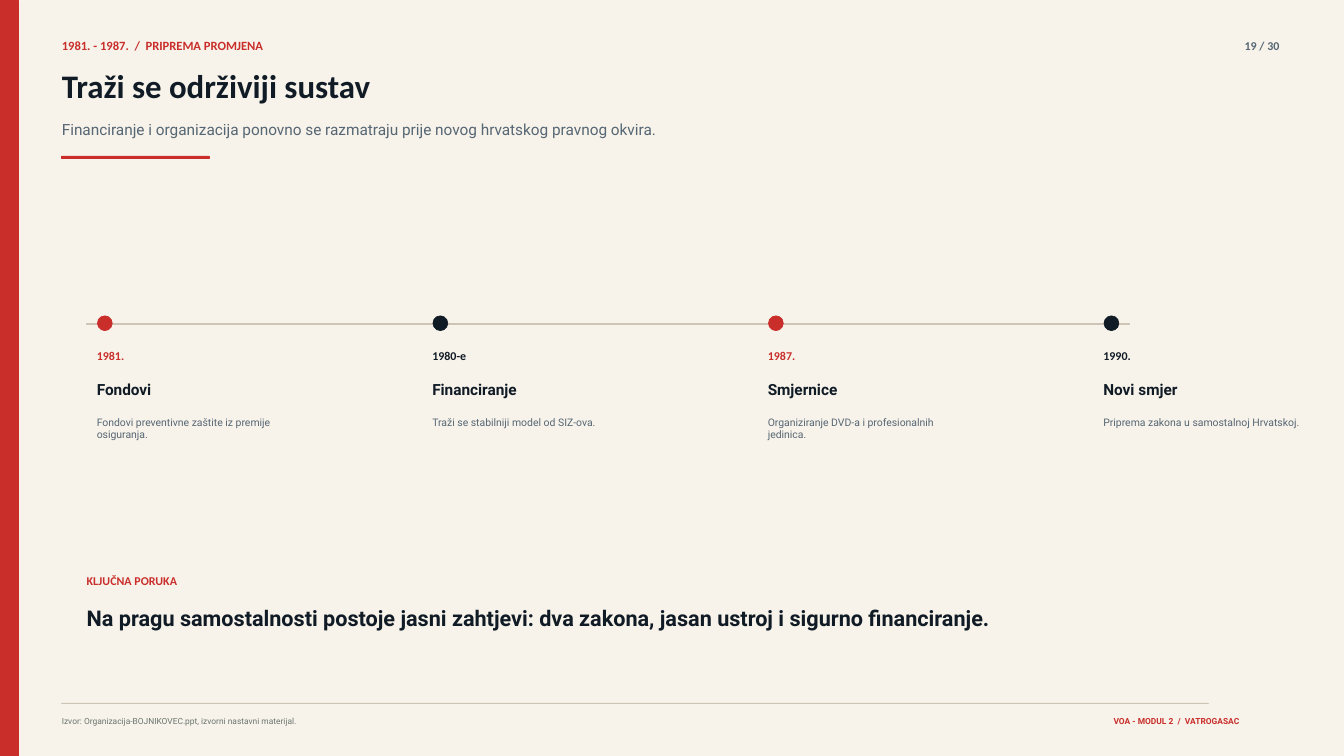
import pptx
import pptx.dml.color
import pptx.enum.shapes
import pptx.enum.text
import pptx.util

Inches = pptx.util.Inches
SHAPE = pptx.enum.shapes.MSO_SHAPE
RIGHT = pptx.enum.text.PP_ALIGN.RIGHT

HUES = {
    "paper": "F7F3EA",
    "red": "C92E2B",
    "ink": "101B26",
    "slate": "566674",
    "rule": "CDC4B5",
    "moss": "6A756E",
}
HEAD, BODY = "Calibri", "Roboto"

STEPS = [
    ("1981.", "Fondovi", "Fondovi preventivne zaštite iz premije osiguranja."),
    ("1980-e", "Financiranje", "Traži se stabilniji model od SIZ-ova."),
    ("1987.", "Smjernice", "Organiziranje DVD-a i profesionalnih jedinica."),
    ("1990.", "Novi smjer", "Priprema zakona u samostalnoj Hrvatskoj."),
]


def tint(hue):
    return pptx.dml.color.RGBColor.from_string(HUES[hue])


def form(slide, kind, x, y, w, h, hue):
    """Add a filled preset shape with a hairline edge of the same colour."""
    shape = slide.shapes.add_shape(kind, Inches(x), Inches(y), Inches(w), Inches(h))
    shape.shadow.inherit = False
    shape.fill.solid()
    shape.fill.fore_color.rgb = tint(hue)
    shape.line.color.rgb = tint(hue)
    shape.line.width = 0


def text(slide, x, y, w, h, words, size, face, hue, bold=True, align=None):
    box = slide.shapes.add_textbox(Inches(x), Inches(y), Inches(w), Inches(h))
    frame = box.text_frame
    frame.word_wrap = True
    frame.margin_left = frame.margin_right = 0
    frame.margin_top = frame.margin_bottom = 0
    para = frame.paragraphs[0]
    para.text = words
    para.alignment = align
    font = para.font
    font.size = pptx.util.Pt(size)
    font.name = face
    font.bold = bold
    font.color.rgb = tint(hue)


def header(slide, x, y, w):
    text(slide, x, y, 12.81, 0.23, "1981. - 1987.  /  PRIPREMA PROMJENA",
         13.5, HEAD, "red")
    text(slide, x + w - 1.56, y + 0.01, 1.56, 0.21, "19 / 30",
         12.8, HEAD, "slate", align=RIGHT)
    text(slide, x, y + 0.42, w, 0.62, "Traži se održiviji sustav", 35.2, HEAD, "ink")
    text(slide, x, y + 1.22, 8.88, 0.35,
         "Financiranje i organizacija ponovno se razmatraju "
         "prije novog hrvatskog pravnog okvira.",
         16.5, BODY, "slate", bold=False)
    form(slide, SHAPE.RECTANGLE, x, y + 1.76, 2.19, 0.04, "red")


def step(slide, x, y, hue, date, name, note):
    """Place one dot of the timeline with its date, name and note below."""
    form(slide, SHAPE.OVAL, x + 0.01, y, 0.22, 0.22, hue)
    text(slide, x, y + 0.48, 2.71, 0.22, date, 12.8, HEAD, hue)
    text(slide, x, y + 0.96, 2.97, 0.33, name, 16.5, BODY, "ink")
    text(slide, x, y + 1.49, 3.04, 0.47, note, 11.2, BODY, "slate", bold=False)


def timeline(slide, x, y, w):
    form(slide, SHAPE.RECTANGLE, x, y + 0.11, w, 0.02, "rule")
    gap = 4.993
    for i, item in enumerate(STEPS):
        step(slide, x + 0.15 + i * gap, y, ("red", "ink")[i % 2], *item)


def message(slide, x, y, w):
    text(slide, x, y, 3.33, 0.22, "KLJUČNA PORUKA", 12.8, HEAD, "red")
    text(slide, x, y + 0.46, w, 0.47,
         "Na pragu samostalnosti postoje jasni zahtjevi: "
         "dva zakona, jasan ustroj i sigurno financiranje.",
         23.2, BODY, "ink")


def footer(slide, x, y, w):
    form(slide, SHAPE.RECTANGLE, x, y, w, 0.01, "rule")
    text(slide, x, y + 0.19, 14.17, 0.16,
         "Izvor: Organizacija-BOJNIKOVEC.ppt, izvorni nastavni materijal.",
         9, BODY, "moss", bold=False)
    text(slide, x + 14.5, y + 0.19, 3.02, 0.16, "VOA - MODUL 2  /  VATROGASAC",
         9, BODY, "red", align=RIGHT)


def main():
    deck = pptx.Presentation()
    deck.slide_width, deck.slide_height = Inches(20), Inches(11.25)
    slide = deck.slides.add_slide(deck.slide_layouts[6])
    slide.background.fill.solid()
    slide.background.fill.fore_color.rgb = tint("paper")
    form(slide, SHAPE.RECTANGLE, 0, 0, 0.27, 11.25, "red")
    header(slide, 0.92, 0.56, 18.12)
    footer(slide, 0.92, 10.46, 17.06)
    timeline(slide, 1.29, 4.7, 15.52)
    message(slide, 1.29, 8.54, 15.42)
    deck.save("out.pptx")


if __name__ == "__main__":
    main()
